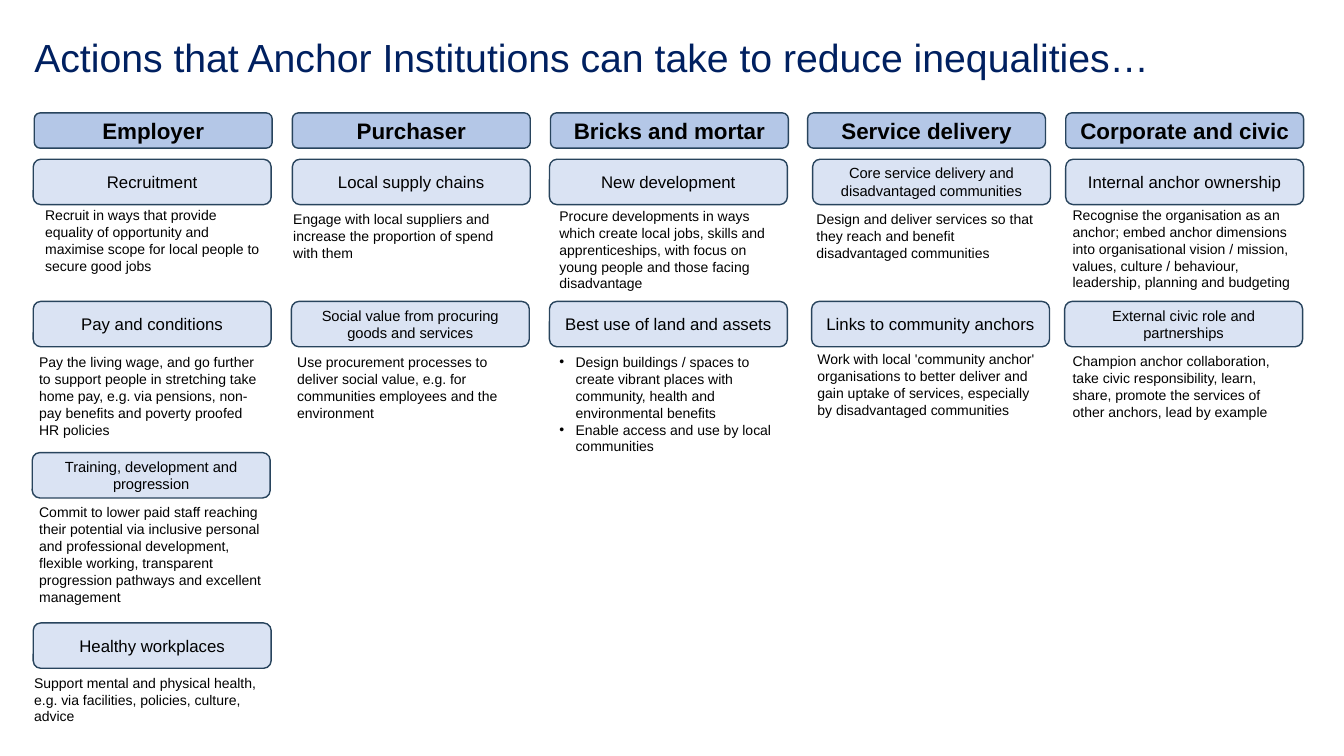
from dataclasses import dataclass

from lxml.etree import SubElement
from pptx import Presentation
from pptx.dml.color import RGBColor
from pptx.enum.shapes import MSO_SHAPE
from pptx.enum.text import MSO_ANCHOR, MSO_AUTO_SIZE, PP_ALIGN
from pptx.oxml.ns import qn
from pptx.util import Pt


@dataclass(frozen=True)
class Theme:
    font: str = "Arial"
    navy: str = "002060"
    ink: str = "000000"
    edge: str = "28445D"
    deep: str = "B4C7E7"
    pale: str = "DAE3F3"
    title: float = 28
    head: float = 16
    topic: float = 12
    small: float = 10.5
    body: float = 10


@dataclass(frozen=True)
class Topic:
    name: str
    shift: int
    texts: tuple
    left: int
    drop: int
    width: int
    lines: int
    small: bool = False


THEME = Theme()
SCALE = 9144
WIDTH, HEIGHT = 1333, 750
LEFT, TOP, PITCH = 34, 112, 255.75
CARD, HEAD, TAB = 236, 35, 45
ROWS = (46, 187, 337, 506)
INDENT = 16

COLUMNS = (
    ("Employer", (
        Topic("Recruitment", -1, (
            "Recruit in ways that provide equality of opportunity and maximise "
            "scope for local people to secure good jobs",), 1, 42, 234, 4),
        Topic("Pay and conditions", -1, (
            "Pay the living wage, and go further to support people in stretching "
            "take home pay, e.g. via pensions, non-pay benefits and poverty "
            "proofed HR policies",), -5, 47, 236, 5),
        Topic("Training, development and progression", -2, (
            "Commit to lower paid staff reaching their potential via inclusive "
            "personal and professional development, flexible working, transparent "
            "progression pathways and excellent management",),
            -5, 46, 251, 6, True),
        Topic("Healthy workplaces", -1, (
            "Support mental and physical health, e.g. via facilities, policies, "
            "culture, advice",), -10, 46, 251, 3),
    )),
    ("Purchaser", (
        Topic("Local supply chains", 0, (
            "Engage with local suppliers and increase the proportion of spend "
            "with them",), -9, 46, 245, 3),
        Topic("Social value from procuring goods and services", -1, (
            "Use procurement processes to deliver social value, e.g. for "
            "communities employees and the environment",), -5, 47, 233, 4, True),
    )),
    ("Bricks and mortar", (
        Topic("New development", -1, (
            "Procure developments in ways which create local jobs, skills and "
            "apprenticeships, with focus on young people and those facing "
            "disadvantage",), -1, 43, 239, 5),
        Topic("Best use of land and assets", -1, (
            "Design buildings / spaces to create vibrant places with community, "
            "health and environmental benefits",
            "Enable access and use by local communities"), -1, 47, 242, 6),
    )),
    ("Service delivery", (
        Topic("Core service delivery and disadvantaged communities", 5, (
            "Design and deliver services so that they reach and benefit "
            "disadvantaged communities",), -1, 46, 247, 3, True),
        Topic("Links to community anchors", 4, (
            "Work with local 'community anchor' organisations to better deliver "
            "and gain uptake of services, especially by disadvantaged "
            "communities",), 0, 44, 236, 4),
    )),
    ("Corporate and civic", (
        Topic("Internal anchor ownership", 0, (
            "Recognise the organisation as an anchor; embed anchor dimensions "
            "into organisational vision / mission, values, culture / behaviour, "
            "leadership, planning and budgeting",), -3, 42, 236, 5),
        Topic("External civic role and partnerships", -1, (
            "Champion anchor collaboration, take civic responsibility, learn, "
            "share, promote the services of other anchors, lead by example",),
            -3, 46, 235, 4, True),
    )),
)


def px(*sizes):
    return [round(size * SCALE) for size in sizes]


def style(para, size, color=THEME.ink, bold=False):
    font = para.font
    font.name = THEME.font
    font.size = Pt(size)
    font.bold = bold
    font.color.rgb = RGBColor.from_string(color)


def bullet(para):
    props = para._p.get_or_add_pPr()
    indent = px(INDENT)[0]
    props.set("marL", str(indent))
    props.set("indent", str(-indent))
    SubElement(props, qn("a:buFont")).set("typeface", THEME.font)
    SubElement(props, qn("a:buChar")).set("char", "•")


def add_title(slide, text, box):
    shape = slide.shapes.title
    shape.left, shape.top, shape.width, shape.height = px(*box)
    frame = shape.text_frame
    frame.text = text
    frame.vertical_anchor = MSO_ANCHOR.MIDDLE
    para = frame.paragraphs[0]
    para.alignment = PP_ALIGN.LEFT
    para.line_spacing = 0.9
    style(para, THEME.title, THEME.navy)


def add_tab(slide, text, box, fill, size, bold=False):
    shape = slide.shapes.add_shape(MSO_SHAPE.ROUNDED_RECTANGLE, *px(*box))
    shape.shadow.inherit = False
    shape.fill.solid()
    shape.fill.fore_color.rgb = RGBColor.from_string(fill)
    shape.line.color.rgb = RGBColor.from_string(THEME.edge)
    shape.line.width = Pt(1)
    frame = shape.text_frame
    frame.word_wrap = True
    frame.vertical_anchor = MSO_ANCHOR.MIDDLE
    frame.text = text
    para = frame.paragraphs[0]
    para.alignment = PP_ALIGN.CENTER
    style(para, size, bold=bold)


def add_body(slide, texts, box):
    frame = slide.shapes.add_textbox(*px(*box)).text_frame
    frame.word_wrap = True
    frame.auto_size = MSO_AUTO_SIZE.SHAPE_TO_FIT_TEXT
    frame.text = "\n".join(texts)
    for para in frame.paragraphs:
        if len(texts) > 1:
            bullet(para)
        style(para, THEME.body)


def add_column(slide, name, topics, left, top):
    add_tab(slide, name, (left, top, CARD, HEAD), THEME.deep, THEME.head, True)
    for topic, row in zip(topics, ROWS):
        y = top + row
        size = THEME.small if topic.small else THEME.topic
        add_tab(slide, topic.name, (left + topic.shift, y, CARD, TAB),
                THEME.pale, size)
        add_body(slide, topic.texts, (left + topic.left, y + topic.drop,
                                      topic.width, 10 + 17 * topic.lines))


def main():
    deck = Presentation()
    deck.slide_width, deck.slide_height = px(WIDTH, HEIGHT)
    slide = deck.slides.add_slide(deck.slide_layouts[5])
    add_title(slide, "Actions that Anchor Institutions can take to reduce "
              "inequalities…", (24, 30, 1244, 59))
    for i, (name, topics) in enumerate(COLUMNS):
        add_column(slide, name, topics, round(LEFT + PITCH * i), TOP)
    deck.save("out.pptx")


if __name__ == "__main__":
    main()
